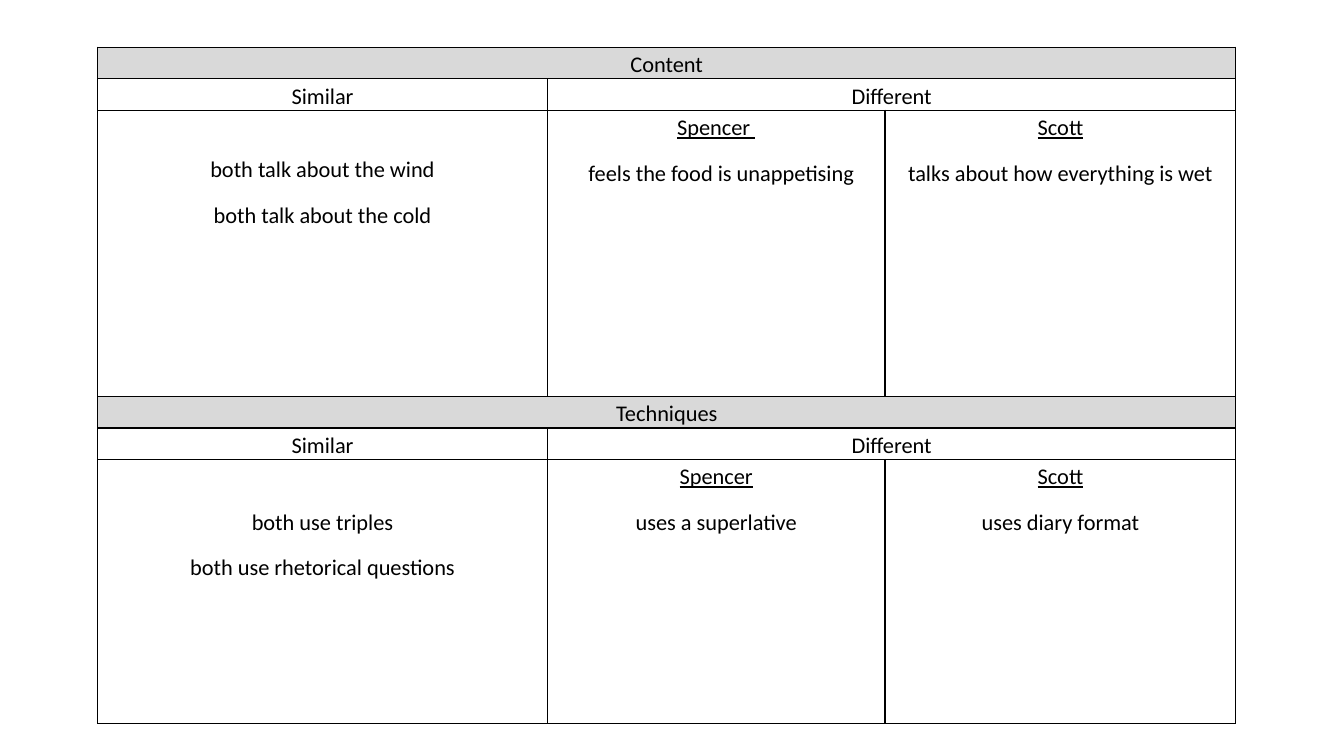
from lxml import etree
from pptx import Presentation
from pptx.dml import color
from pptx.enum import text
from pptx.oxml import ns
from pptx.util import Pt

COLUMNS = [321.2, 241.2, 250.6]
HEADING_HEIGHT = 22.5
BLACK, GREY = "000000", "D9D9D9"
SECTIONS = [
    {
        "title": "Content",
        "height": 204.4,
        "similar": ["both talk about the wind", "both talk about the cold"],
        "similar_top": 30,
        "different": [("Spencer ", "feels the food is unappetising", 7.2),
                      ("Scott", "talks about how everything is wet", 0)],
    },
    {
        "title": "Techniques",
        "height": 188.6,
        "similar": ["both use triples", "both use rhetorical questions"],
        "similar_top": 32.4,
        "different": [("Spencer", "uses a superlative", 0),
                      ("Scott", "uses diary format", 0)],
    },
]


def rgb(value):
    return color.RGBColor.from_string(value)


def set_borders(cell):
    tc_pr = cell._tc.get_or_add_tcPr()
    for index, side in enumerate(("lnL", "lnR", "lnT", "lnB")):
        line = etree.Element(ns.qn("a:" + side), w=str(Pt(1)))
        fill = etree.SubElement(line, ns.qn("a:solidFill"))
        etree.SubElement(fill, ns.qn("a:srgbClr"), val=BLACK)
        tc_pr.insert(index, line)


def style_paragraph(p):
    p.alignment = text.PP_ALIGN.CENTER
    p.line_spacing = 1.15
    p.space_after = Pt(10)
    p.font.size = Pt(16)
    p.font.name = "Calibri"
    p.font.color.rgb = rgb(BLACK)


def style_cell(cell, fill=None):
    cell.margin_left = cell.margin_right = Pt(4.5)
    cell.margin_top = cell.margin_bottom = 0
    if fill:
        cell.fill.solid()
        cell.fill.fore_color.rgb = rgb(fill)
    else:
        cell.fill.background()
    set_borders(cell)
    style_paragraph(cell.text_frame.paragraphs[0])


def write_lines(cell, lines):
    tf = cell.text_frame
    for index, line in enumerate(lines):
        p = tf.add_paragraph() if index else tf.paragraphs[0]
        p.add_run().text = line
        style_paragraph(p)
    return tf.paragraphs


def write_author(cell, name, remark, indent):
    heading, body = write_lines(cell, [name, remark])
    heading.font.underline = True
    if indent:
        body._p.get_or_add_pPr().set("marL", str(Pt(indent)))


def add_section(table, top, section):
    heights = (HEADING_HEIGHT, HEADING_HEIGHT, section["height"])
    for offset, height in enumerate(heights):
        table.rows[top + offset].height = Pt(height)
        for col in range(len(COLUMNS)):
            style_cell(table.cell(top + offset, col), None if offset else GREY)

    title, different = table.cell(top, 0), table.cell(top + 1, 1)
    title.merge(table.cell(top, 2))
    different.merge(table.cell(top + 1, 2))
    write_lines(title, [section["title"]])
    write_lines(table.cell(top + 1, 0), ["Similar"])
    write_lines(different, ["Different"])

    similar = table.cell(top + 2, 0)
    similar.margin_top = Pt(section["similar_top"])
    write_lines(similar, section["similar"])
    for col, author in enumerate(section["different"], 1):
        write_author(table.cell(top + 2, col), *author)


def add_comparison(s):
    height = sum(2 * HEADING_HEIGHT + section["height"] for section in SECTIONS)
    frame = s.shapes.add_table(3 * len(SECTIONS), len(COLUMNS), Pt(69.8), Pt(33.8),
                               Pt(sum(COLUMNS)), Pt(height))
    table = frame.table
    table.first_row = table.horz_banding = False
    for column, width in zip(table.columns, COLUMNS):
        column.width = Pt(width)
    for index, section in enumerate(SECTIONS):
        add_section(table, 3 * index, section)


def main():
    prs = Presentation()
    prs.slide_width, prs.slide_height = Pt(960), Pt(540)
    s = prs.slides.add_slide(prs.slide_layouts[6])
    add_comparison(s)
    prs.save("out.pptx")


if __name__ == "__main__":
    main()
